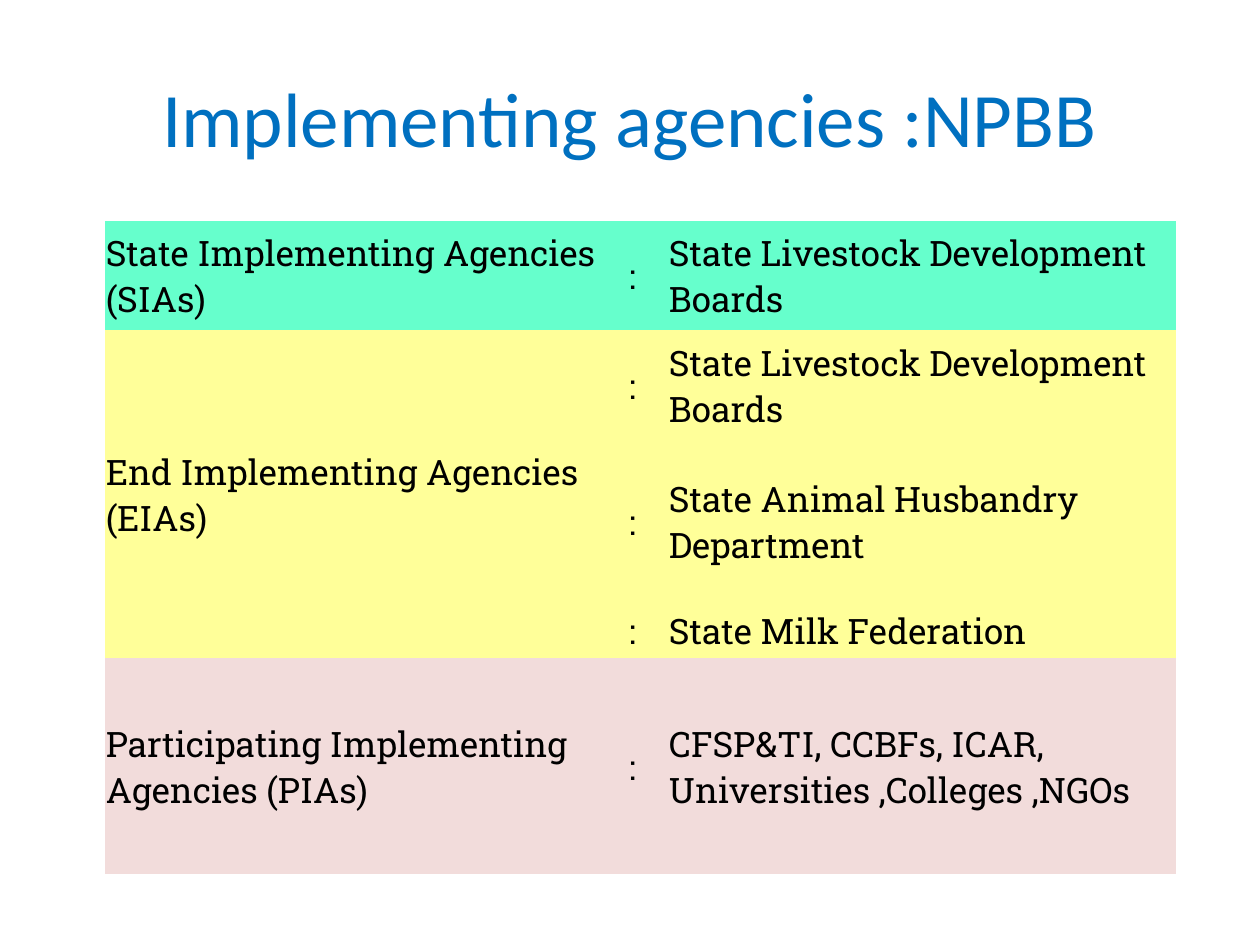
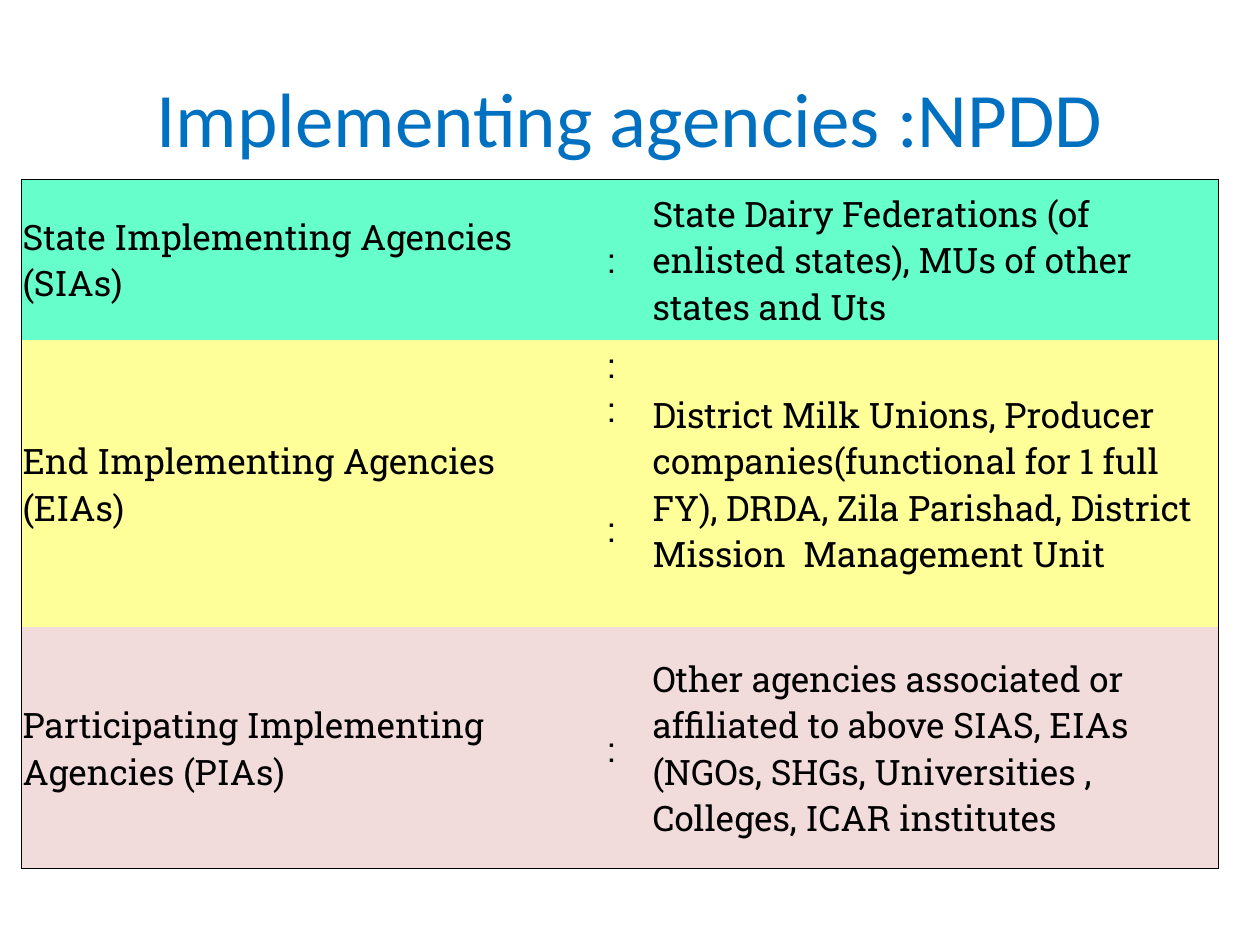
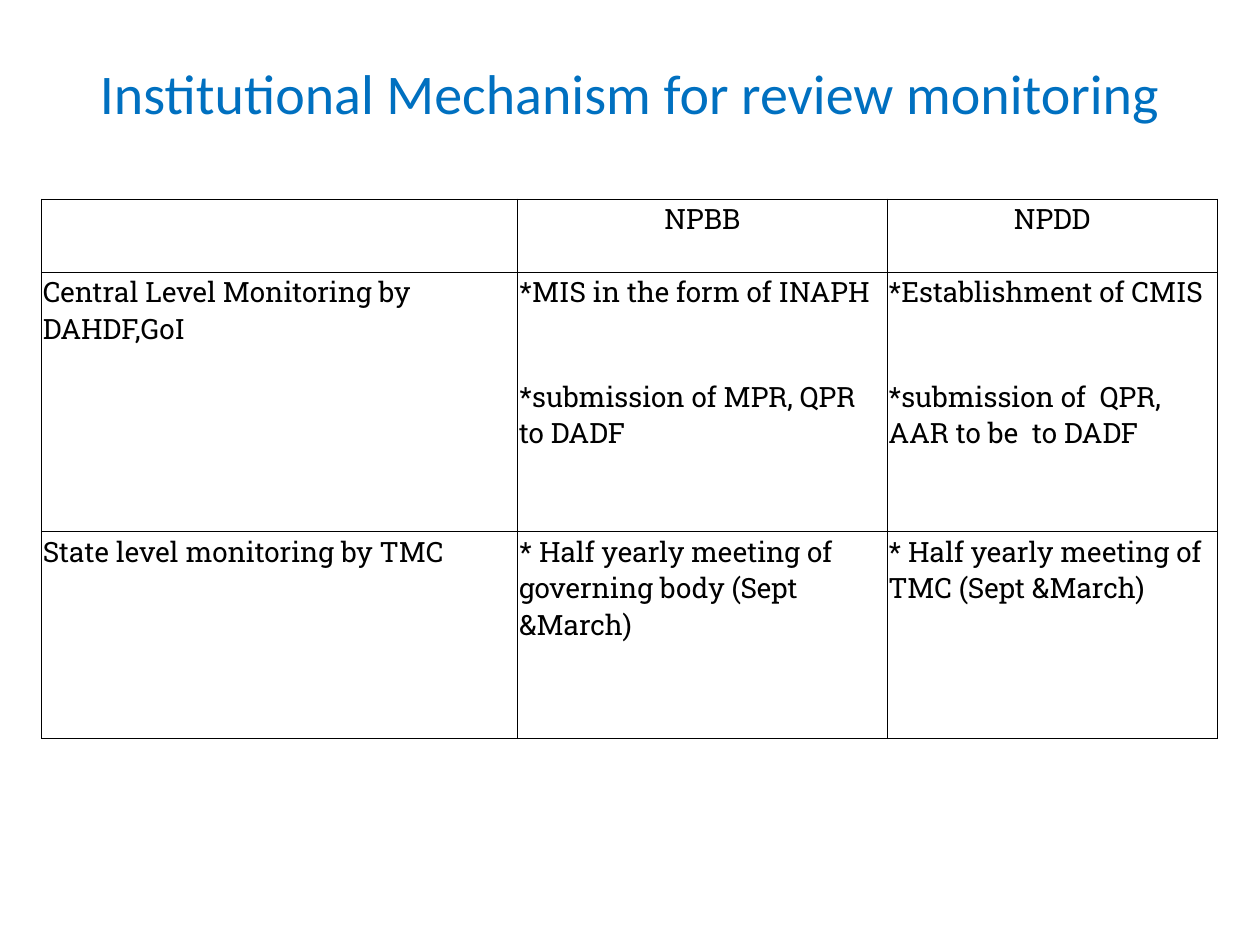
from dataclasses import dataclass
from enum import Enum
from typing import Optional

from lxml import etree
from pptx import Presentation
from pptx import util as u
from pptx.dml.color import RGBColor
from pptx.enum import text
from pptx.oxml.ns import qn

SLIDE_WIDTH, SLIDE_HEIGHT = u.Inches(10), u.Inches(7.5)
GRID_COLUMNS, GRID_ROWS = 100, 75

TITLE_FONT, BODY_FONT = "Calibri", "Roboto Slab"
BLUE, BLACK = "0070C0", "000000"
MINT, YELLOW, PINK = "66FFCC", "FFFF99", "F2DCDB"
BORDER_WIDTH = u.Pt(0.5)
CELL_MARGIN = u.Inches(0.01)

SIA = "State Implementing Agencies (SIAs)"
EIA = "End Implementing Agencies (EIAs)"
PIA = "Participating Implementing Agencies (PIAs)"
BOARDS = "State Livestock Development Boards"

MIDDLE, TOP = text.MSO_ANCHOR.MIDDLE, text.MSO_ANCHOR.TOP
LEFT, CENTER = text.PP_ALIGN.LEFT, text.PP_ALIGN.CENTER


class Border(Enum):
    NONE = 0
    OUTLINE = 1
    BANDS = 2


@dataclass(frozen=True)
class Title:
    wording: str
    size: int = 44
    height: float = 12.5


@dataclass(frozen=True)
class Band:
    """Table rows that belong together; None continues the cell above."""
    heights: tuple[float, ...]
    rows: tuple[tuple[Optional[str], ...], ...]
    fill: Optional[str] = None
    align: text.PP_ALIGN = LEFT


@dataclass(frozen=True)
class Grid:
    left: float
    top: float
    widths: tuple[float, ...]
    bands: tuple[Band, ...]
    border: Border = Border.NONE
    size: int = 20
    anchor: text.MSO_ANCHOR = MIDDLE


PAGES = (
    (Title("Implementing agencies :NPBB"),
     Grid(8.3, 17.5, (41.5, 3.2, 40.3), (
         Band((8.7,), ((SIA, ":", BOARDS),), MINT),
         Band((8.7, 12.9, 4.4), (
             (EIA, ":", BOARDS),
             (None, ":", "State Animal Husbandry Department"),
             (None, ":", "State Milk Federation")), YELLOW),
         Band((17.2,), (
             (PIA, ":", "CFSP&TI, CCBFs, ICAR, Universities ,Colleges ,NGOs"),), PINK),
     ))),
    (Title("Implementing agencies :NPDD"),
     Grid(1.7, 14.2, (46.4, 3.6, 45), (
         Band((12.8,), (
             (SIA, ":", "State Dairy Federations (of enlisted states), "
                        "MUs of other states and Uts"),), MINT),
         Band((3.5, 3.5, 15.8), (
             (EIA, ":", "District Milk Unions, Producer companies(functional for 1 full FY), "
                        "DRDA, Zila Parishad, District Mission  Management Unit"),
             (None, ":", None),
             (None, ":", None)), YELLOW),
         Band((19.1,), (
             (PIA, ":", "Other agencies associated or affiliated to above SIAS, EIAs "
                        "(NGOs, SHGs, Universities , Colleges, ICAR institutes"),), PINK),
     ), Border.OUTLINE)),
    (Title("Institutional Mechanism for review monitoring", 32, 8.7),
     Grid(3.3, 15.8, (37.8, 29.3, 26.2), (
         Band((5.8,), (("", "NPBB", "NPDD"),), align=CENTER),
         Band((8.3, 12.3), (
             ("Central Level Monitoring by DAHDF,GoI",
              "*MIS in the form of INAPH", "*Establishment of CMIS"),
             (None, "*submission of MPR, QPR to DADF",
              "*submission of  QPR, AAR to be  to DADF"))),
         Band((16.4,), (
             ("State level monitoring by TMC",
              "* Half yearly meeting of governing body (Sept &March)",
              "* Half yearly meeting of TMC (Sept &March)"),)),
     ), Border.BANDS, 16, TOP)),
)


def across(columns: float) -> int:
    return round(SLIDE_WIDTH * columns / GRID_COLUMNS)


def down(rows: float) -> int:
    return round(SLIDE_HEIGHT * rows / GRID_ROWS)


def colour(value: str) -> RGBColor:
    return RGBColor.from_string(value)


def write(frame, wording: str, font: str, size: int, ink: str, align: text.PP_ALIGN) -> None:
    para = frame.paragraphs[0]
    para.alignment = align
    span = para.add_run()
    span.text = wording
    span.font.name = font
    span.font.size = u.Pt(size)
    span.font.color.rgb = colour(ink)


def draw_title(page, title: Title) -> None:
    box = page.shapes.add_textbox(across(5), down(3), across(90), down(title.height))
    frame = box.text_frame
    frame.word_wrap = True
    frame.vertical_anchor = MIDDLE
    write(frame, title.wording, TITLE_FONT, title.size, BLUE, CENTER)


def set_borders(cell, sides: dict[str, bool]) -> None:
    """Line the sides that are True and clear the others."""
    properties = cell._tc.get_or_add_tcPr()
    for side, shown in sides.items():
        line = etree.SubElement(properties, qn(f"a:ln{side}"), w=str(BORDER_WIDTH))
        if shown:
            paint = etree.SubElement(line, qn("a:solidFill"))
            etree.SubElement(paint, qn("a:srgbClr"), val=BLACK)
        else:
            etree.SubElement(line, qn("a:noFill"))


def draw_cell(cell, wording: Optional[str], band: Band, grid: Grid) -> None:
    cell.margin_left = cell.margin_right = cell.margin_top = CELL_MARGIN
    cell.margin_bottom = 0
    cell.vertical_anchor = grid.anchor
    if band.fill:
        cell.fill.solid()
        cell.fill.fore_color.rgb = colour(band.fill)
    else:
        cell.fill.background()
    if wording:
        write(cell.text_frame, wording, BODY_FONT, grid.size, BLACK, band.align)


def draw_grid(page, grid: Grid) -> None:
    heights = [height for band in grid.bands for height in band.heights]
    frame = page.shapes.add_table(
        len(heights), len(grid.widths), across(grid.left), down(grid.top),
        across(sum(grid.widths)), down(sum(heights)))
    table = frame.table
    table.first_row = table.horz_banding = False
    for column, width in zip(table.columns, grid.widths):
        column.width = across(width)
    for row, height in zip(table.rows, heights):
        row.height = down(height)

    outlined = grid.border is not Border.NONE
    ruled = grid.border is Border.BANDS
    last_row, last_column = len(heights) - 1, len(grid.widths) - 1
    first = 0
    for band in grid.bands:
        end = first + len(band.rows) - 1
        for c, wordings in enumerate(zip(*band.rows)):
            starts = [first + i for i, wording in enumerate(wordings) if wording is not None]
            for start, following in zip(starts, starts[1:] + [end + 1]):
                if following - start > 1:
                    table.cell(start, c).merge(table.cell(following - 1, c))
            for r, wording in enumerate(wordings, first):
                cell = table.cell(r, c)
                bottom = r + (cell.span_height if cell.is_merge_origin else 1) - 1
                set_borders(cell, {
                    "L": ruled or outlined and c == 0,
                    "R": ruled or outlined and c == last_column,
                    "T": outlined and r == 0 or ruled and r == first,
                    "B": outlined and bottom == last_row or ruled and bottom == end,
                })
                draw_cell(cell, wording, band, grid)
        first = end + 1


def main() -> None:
    deck = Presentation()
    deck.slide_width, deck.slide_height = SLIDE_WIDTH, SLIDE_HEIGHT
    for title, grid in PAGES:
        page = deck.slides.add_slide(deck.slide_layouts[6])
        draw_title(page, title)
        draw_grid(page, grid)
    deck.save("out.pptx")


if __name__ == "__main__":
    main()
